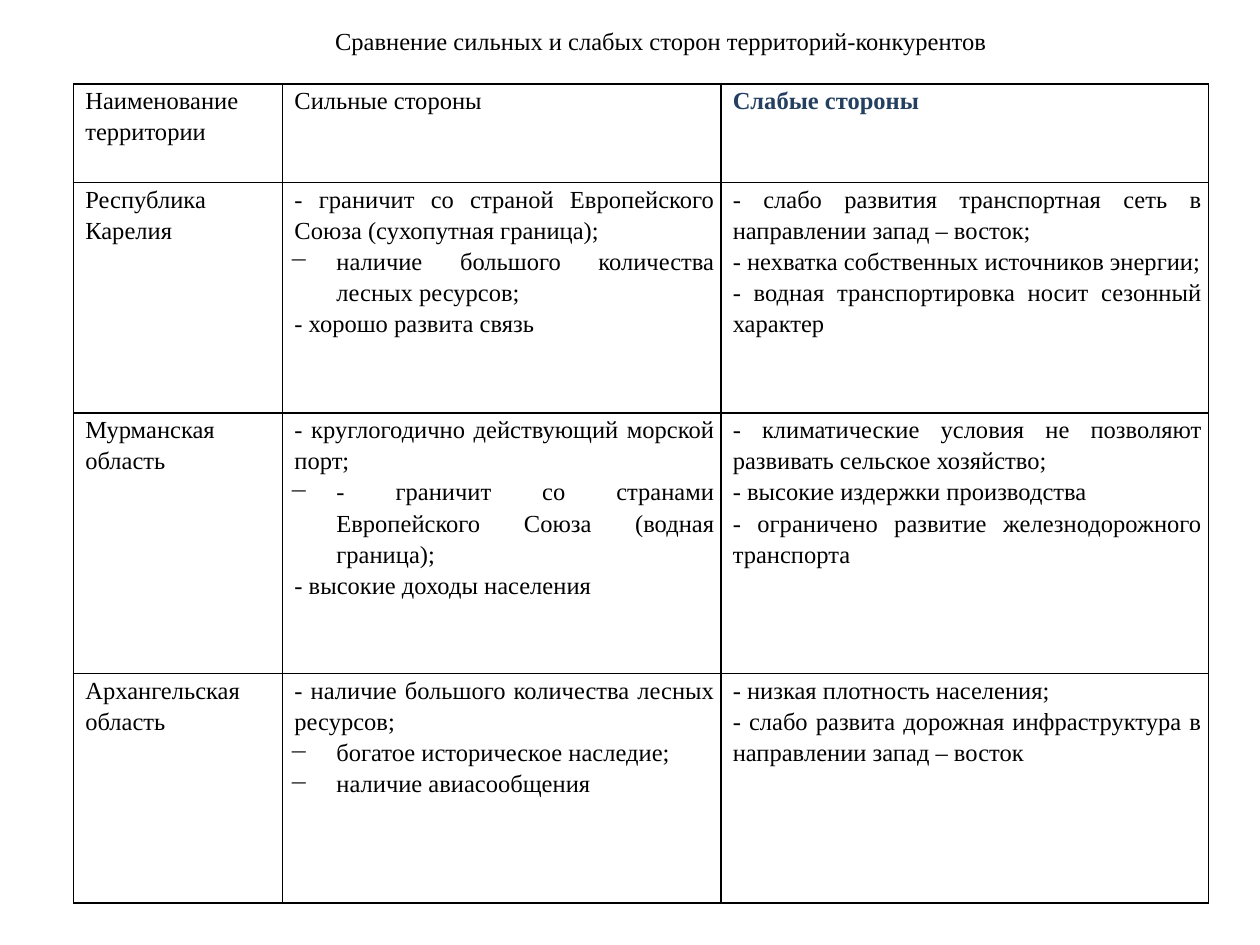
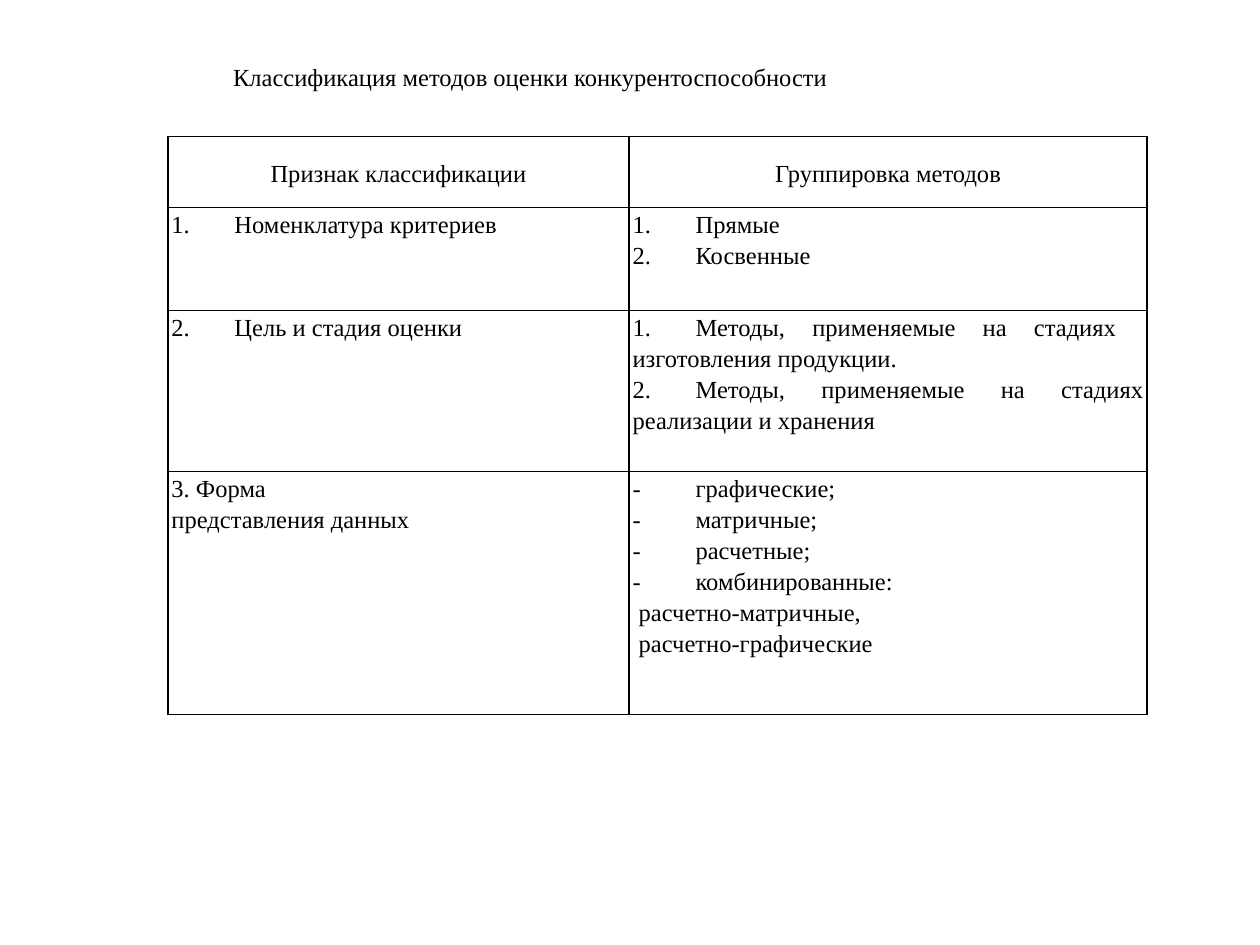
from dataclasses import dataclass

from lxml.etree import SubElement
from pptx import Presentation
from pptx.dml.color import RGBColor
from pptx.enum.text import MSO_ANCHOR as Anchor, MSO_AUTO_SIZE as AutoSize, PP_ALIGN as Align
from pptx.oxml import parse_xml
from pptx.oxml.ns import nsdecls, qn
from pptx.util import Pt

BLACK, WHITE, NAVY = "000000", "FFFFFF", "243F60"


def rgb(hex_colour):
    return RGBColor.from_string(hex_colour)


@dataclass
class Line:
    """One paragraph, with lengths in points; None takes the table's margin."""
    text: str
    margin: float = None
    indent: float = 0
    bullet: str = None
    colour: str = BLACK
    bold: bool = False
    align: Align = Align.JUSTIFY


def dash(text):
    return Line(text, margin=27, indent=-27, bullet="−")


def centred(text):
    return Line(text, align=Align.CENTER)


class Deck:
    font, size, spacing, tab, border = "Times New Roman", 14, 1.15, 18, 1

    def __init__(self):
        self.prs = Presentation()
        self.prs.slide_width, self.prs.slide_height = Pt(720), Pt(540)
        self.slide = None

    def new_slide(self):
        self.slide = self.prs.slides.add_slide(self.prs.slide_layouts[5])

    def format(self, paragraph, line, margin=0):
        paragraph.text = line.text
        paragraph.alignment = line.align
        font = paragraph.font
        font.name, font.size, font.bold = self.font, Pt(self.size), line.bold
        font.color.rgb = rgb(line.colour)
        props = paragraph._p.get_or_add_pPr()
        props.set("marL", str(Pt(margin if line.margin is None else line.margin)))
        props.set("indent", str(Pt(line.indent)))
        extras = []
        if line.bullet:
            extras.append(f'<a:buChar {nsdecls("a")} char="{line.bullet}"/>')
        if "\t" in line.text:
            extras.append(f'<a:tabLst {nsdecls("a")}>'
                          f'<a:tab pos="{Pt(self.tab)}" algn="l"/></a:tabLst>')
        for extra in extras:
            props.find(qn("a:defRPr")).addprevious(parse_xml(extra))

    def title(self, line, left, top, width, height, inset_top, inset_side):
        heading = self.slide.shapes.title
        heading.left, heading.top = Pt(left), Pt(top)
        heading.width, heading.height = Pt(width), Pt(height)
        frame = heading.text_frame
        frame.auto_size = AutoSize.NONE
        frame.word_wrap = True
        frame.vertical_anchor = Anchor.MIDDLE
        frame.margin_left = frame.margin_right = Pt(inset_side)
        frame.margin_top, frame.margin_bottom = Pt(inset_top), 0
        self.format(frame.paragraphs[0], line)

    def table(self, left, top, widths, heights, rows, inset, margin=0,
              header_anchor=Anchor.TOP):
        table = self.slide.shapes.add_table(
            len(heights), len(widths), Pt(left), Pt(top),
            Pt(sum(widths)), Pt(sum(heights))).table
        table.first_row = table.horz_banding = False
        for column, width in zip(table.columns, widths):
            column.width = Pt(width)
        for number, (row, height, contents) in enumerate(zip(table.rows, heights, rows)):
            row.height = Pt(height)
            for cell, lines in zip(row.cells, contents):
                cell.vertical_anchor = Anchor.TOP if number else header_anchor
                self.fill_cell(cell, lines, inset, margin)

    def fill_cell(self, cell, lines, inset, margin):
        cell.margin_left = cell.margin_right = Pt(inset)
        cell.margin_top = cell.margin_bottom = 0
        self.outline(cell)
        cell.fill.solid()
        cell.fill.fore_color.rgb = rgb(WHITE)
        frame = cell.text_frame
        for number, line in enumerate(lines):
            paragraph = frame.add_paragraph() if number else frame.paragraphs[0]
            paragraph.line_spacing = self.spacing
            self.format(paragraph, line if isinstance(line, Line) else Line(line), margin)

    def outline(self, cell):
        props = cell._tc.get_or_add_tcPr()
        for side in ("lnL", "lnR", "lnT", "lnB"):
            edge = SubElement(props, qn(f"a:{side}"), w=str(Pt(self.border)))
            SubElement(SubElement(edge, qn("a:solidFill")), qn("a:srgbClr"), val=BLACK)


TERRITORIES = [
    [["Наименование территории"], ["Сильные стороны"],
     [Line("Слабые стороны", colour=NAVY, bold=True)]],
    [["Республика", "Карелия"],
     ["- граничит со страной Европейского Союза (сухопутная граница);",
      dash("наличие большого количества лесных ресурсов;"),
      "- хорошо развита связь"],
     ["- слабо развития транспортная сеть в направлении запад – восток;",
      "- нехватка собственных источников энергии;",
      "- водная транспортировка носит сезонный характер"]],
    [["Мурманская область"],
     ["- круглогодично действующий морской порт;",
      dash("- граничит со странами Европейского Союза (водная граница);"),
      "- высокие доходы населения"],
     ["- климатические условия не позволяют развивать сельское хозяйство;",
      "- высокие издержки производства",
      "- ограничено развитие железнодорожного транспорта"]],
    [["Архангельская область"],
     ["- наличие большого количества лесных ресурсов;",
      dash("богатое историческое наследие;"),
      dash("наличие авиасообщения")],
     ["- низкая плотность населения;",
      "- слабо развита дорожная инфраструктура в направлении запад – восток"]],
]

METHODS = [
    [[centred("Признак классификации")], [centred("Группировка методов")]],
    [["1.\tНоменклатура критериев"], ["1.\tПрямые", "2.\tКосвенные"]],
    [["2.\tЦель и стадия оценки"],
     ["1.\tМетоды, применяемые на стадиях \vизготовления продукции.",
      "2.\tМетоды, применяемые на стадиях реализации и хранения"]],
    [["3. Форма", "представления данных"],
     ["-\tграфические;", "-\tматричные;", "-\tрасчетные;", "-\tкомбинированные:",
      Line("расчетно-матричные,", margin=3.5),
      Line("расчетно-графические", margin=3.5)]],
]


def main():
    deck = Deck()

    deck.new_slide()
    deck.title(Line("Сравнение сильных и слабых сторон территорий-конкурентов",
                    indent=35.5, align=Align.CENTER),
               0, 0, 720, 36, inset_top=10, inset_side=3)
    deck.table(42, 48, [119.5, 250.5, 278.5], [56.25, 131.75, 149, 131],
               TERRITORIES, inset=3.75, margin=3)

    deck.new_slide()
    deck.title(Line("Классификация методов оценки конкурентоспособности",
                    indent=36, align=Align.LEFT),
               90, 24, 630, 36, inset_top=3.6, inset_side=7.2)
    deck.table(96, 78, [263.5, 296], [40.5, 59, 92, 138.75],
               METHODS, inset=2, header_anchor=Anchor.MIDDLE)

    deck.prs.save("out.pptx")


if __name__ == "__main__":
    main()
